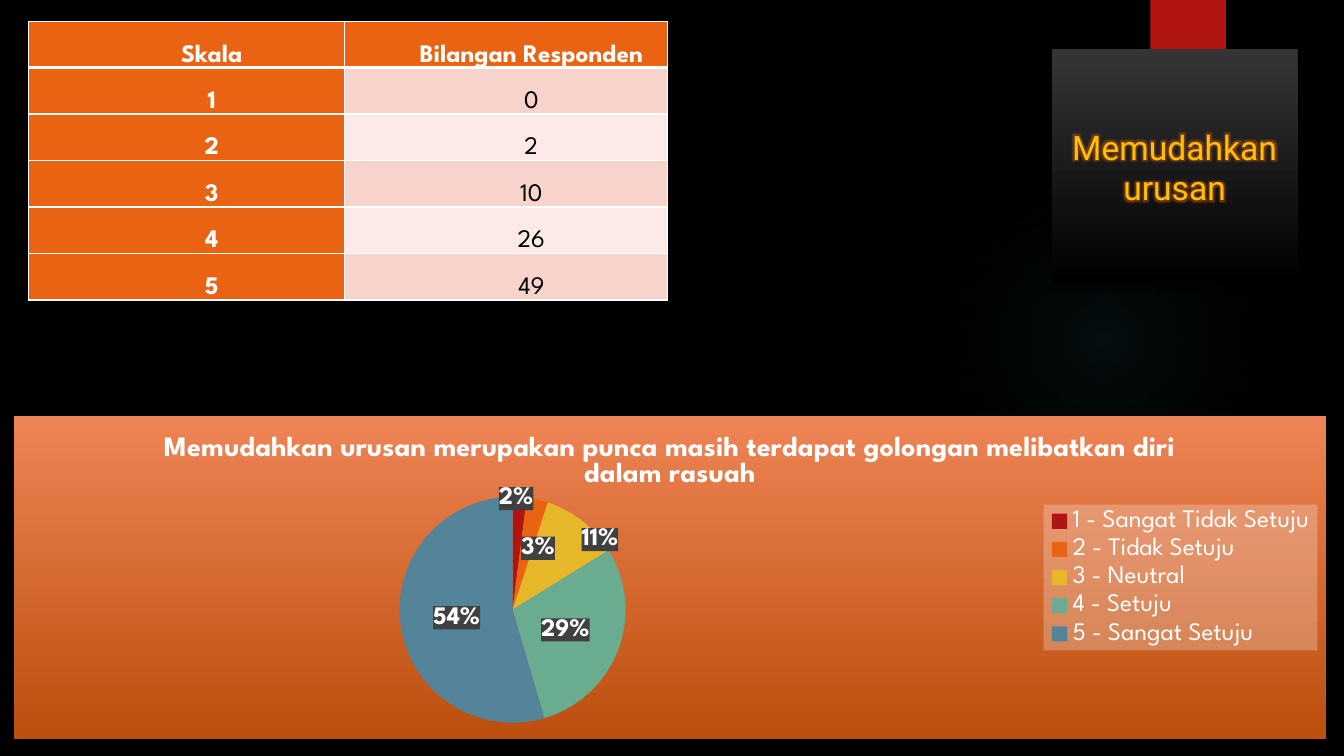
from copy import deepcopy
from dataclasses import dataclass

from pptx import Presentation
from pptx.chart.data import CategoryChartData
from pptx.dml.color import RGBColor as Rgb
from pptx.dml.fill import FillFormat
from pptx.enum.chart import (
    XL_CHART_TYPE as ChartType, XL_LABEL_POSITION as LabelPosition, XL_LEGEND_POSITION as LegendPosition)
from pptx.enum.shapes import MSO_SHAPE as Preset
from pptx.enum.text import MSO_ANCHOR as Anchor, MSO_AUTO_SIZE as AutoSize, PP_ALIGN as Align
from pptx.oxml.ns import qn
from pptx.oxml.xmlchemy import OxmlElement
from pptx.util import Inches, Pt


@dataclass(frozen=True)
class Theme:
    black: str = "000000"
    white: str = "FFFFFF"
    red: str = "B01513"
    orange: str = "EA6312"
    amber: str = "FFC000"
    teal: str = "50B9C1"
    label: str = "404040"
    bands: tuple = ("F7D3CC", "FBEAE7")
    slices: tuple = ("B01513", "EA6312", "E6B729", "6AAC90", "54849A")
    panel: tuple = ("EE8455", "BC4F0E")
    card: tuple = ("353535", "000000")
    body_font: str = "League Spartan"
    title_font: str = "Roboto"
    body: int = 18
    chart_title: int = 20
    title: int = 24


theme = Theme()


def child(parent, tag, index=None, **attributes):
    element = OxmlElement(tag)
    for name, value in attributes.items():
        element.set(name, str(value))
    parent.insert(len(parent) if index is None else index, element)
    return element


def paint(fill, *colors):
    if len(colors) == 1:
        fill.solid()
        fill.fore_color.rgb = Rgb.from_string(colors[0])
        return
    fill.gradient()
    fill.gradient_angle = 270
    for stop, color in zip(fill.gradient_stops, colors):
        stop.color.rgb = Rgb.from_string(color)


deck = Presentation()
deck.slide_width, deck.slide_height = Inches(13.33), Inches(7.5)
page = deck.slides.add_slide(deck.slide_layouts[5])
paint(page.background.fill, theme.black)

halo = page.shapes.add_shape(Preset.OVAL, Inches(9.41), Inches(1.83), Inches(3.08), Inches(3.08))
paint(halo.fill, theme.teal, theme.teal)
halo.fill.gradient_stops[1].position = 0.69
halo_gradient = halo._element.spPr.find(qn("a:gradFill"))
for color, alpha in zip(halo_gradient.iter(qn("a:srgbClr")), (7000, 0)):
    child(color, "a:alpha", val=alpha)
halo_gradient.remove(halo_gradient.find(qn("a:lin")))
circle = child(halo_gradient, "a:path", 1, path="circle")
child(circle, "a:fillToRect", l=50000, t=50000, r=50000, b=50000)

ribbon = page.shapes.add_shape(Preset.RECTANGLE, Inches(11.41), 0, Inches(0.75), Inches(1.25))
paint(ribbon.fill, theme.red)

responses = [("Skala", "Bilangan Responden"), ("1", "0"), ("2", "2"), ("3", "10"), ("4", "26"), ("5", "49")]
table = page.shapes.add_table(
    len(responses), 2, Inches(0.28), Inches(0.21), Inches(6.35), Inches(2.52)).table
table.columns[0].width, table.columns[1].width = Inches(3.14), Inches(3.2)
for row, texts in enumerate(responses):
    table.rows[row].height = Inches(0.42)
    for column, text in enumerate(texts):
        heading = row == 0 or column == 0
        cell = table.cell(row, column)
        cell.text = text
        cell.margin_left = cell.margin_right = Inches(0.07)
        cell.margin_top = cell.margin_bottom = 0
        paint(cell.fill, theme.orange if heading else theme.bands[(row - 1) % 2])
        para = cell.text_frame.paragraphs[0]
        para.alignment = Align.CENTER
        para.line_spacing = 2.0
        para._p.get_or_add_pPr().set("marL", str(Inches(0.5)))
        para.font.name = theme.body_font
        para.font.size = Pt(theme.body)
        para.font.bold = heading
        para.font.color.rgb = Rgb.from_string(theme.white if heading else theme.black)
        for order, side in enumerate("LRTB"):
            thick = (row, side) in ((0, "B"), (1, "T"))
            border = child(cell._tc.get_or_add_tcPr(), f"a:ln{side}", order, w=Pt(3 if thick else 1))
            child(child(border, "a:solidFill"), "a:srgbClr", val=theme.white)

shares = CategoryChartData()
shares.categories = ["1 - Sangat Tidak Setuju", "2 - Tidak Setuju", "3 - Neutral", "4 - Setuju", "5 - Sangat Setuju"]
shares.add_series("Series 1", (2, 3, 11, 29, 54))
chart = page.shapes.add_chart(
    ChartType.PIE, Inches(0.14), Inches(4.13), Inches(13.01), Inches(3.2), shares).chart
chart.has_title = True
chart.chart_title.include_in_layout = False
chart.chart_title.text_frame.text = "Memudahkan urusan merupakan punca masih terdapat golongan melibatkan diri dalam rasuah"
chart.has_legend = True
chart.legend.position = LegendPosition.RIGHT
chart.legend.include_in_layout = False

pie = chart.plots[0]
pie.vary_by_categories = True
series = pie.series[0]
for number, color in enumerate(theme.slices):
    point = series.points[number]
    paint(point.format.fill, color)
    point.format.line.fill.background()

labels = series.data_labels
labels.show_value = True
labels.show_percentage = False
labels.number_format = '0"%"'
labels.number_format_is_linked = False
labels.position = LabelPosition.CENTER
label_shifts = [(0, -0.17), (0.01, -0.02), (0.04, -0.08)]
moved_labels = [series.points[number].data_label for number in range(len(label_shifts))]
for label in moved_labels:
    label.position = LabelPosition.CENTER

title_font = chart.chart_title.text_frame.paragraphs[0].font
chart_fonts = [(chart.font, 10, False), (title_font, theme.chart_title, True), (chart.legend.font, theme.body, False)]
chart_fonts += [(label.font, theme.body, True) for label in [labels, *moved_labels]]
for font, size, bold in chart_fonts:
    font.name = theme.body_font
    font.size = Pt(size)
    font.bold = bold
    font.color.rgb = Rgb.from_string(theme.white)

label_group = labels._element
for leader in label_group.findall(qn("c:showLeaderLines")):
    leader.set("val", "0")
moved_elements = label_group.findall(qn("c:dLbl"))
for element, (across, down) in zip(moved_elements, label_shifts):
    place = child(child(element, "c:layout", 1), "c:manualLayout")
    child(place, "c:x", val=across)
    child(place, "c:y", val=down)
    element.insert(2, deepcopy(label_group.find(qn("c:numFmt"))))

backdrops = [(chart._chartSpace, theme.panel), (chart.legend._element, (theme.white,))]
backdrops += [(element, (theme.label,)) for element in [label_group, *moved_elements]]
for owner, colors in backdrops:
    text_style = owner.find(qn("c:txPr"))
    backdrop = child(owner, "c:spPr", owner.index(text_style))
    paint(FillFormat.from_fill_parent(backdrop), *colors)
legend_color = next(chart.legend._element.find(qn("c:spPr")).iter(qn("a:srgbClr")))
child(legend_color, "a:alpha", val=25000)
child(child(chart._chartSpace.find(qn("c:spPr")), "a:ln"), "a:noFill")

plot_area = chart._chartSpace.chart.plotArea
for layout in plot_area.findall(qn("c:layout")):
    plot_area.remove(layout)
place = child(child(plot_area, "c:layout", 0), "c:manualLayout")
plot_frame = [("layoutTarget", "inner"), ("xMode", "edge"), ("yMode", "edge"),
              ("x", 0.03), ("y", 0.25), ("w", 0.7), ("h", 0.7)]
for tag, value in plot_frame:
    child(place, f"c:{tag}", val=value)

title = page.shapes.title
page.shapes._spTree.append(title._element)
title.left, title.top, title.width, title.height = Inches(10.43), Inches(0.49), Inches(2.44), Inches(2.33)
paint(title.fill, *theme.card)
frame = title.text_frame
frame.text = "Memudahkan urusan"
frame.word_wrap = True
frame.auto_size = AutoSize.NONE
frame.vertical_anchor = Anchor.MIDDLE
para = frame.paragraphs[0]
para.alignment = Align.CENTER
para.font.name = theme.title_font
para.font.size = Pt(theme.title)
para.font.color.rgb = Rgb.from_string(theme.amber)
glow = child(child(para.runs[0]._r.get_or_add_rPr(), "a:effectLst"), "a:glow", rad=Pt(5))
child(child(glow, "a:srgbClr", val=theme.orange), "a:alpha", val=40000)

for shape, shadow in ((halo, None), (ribbon, (45, 3, 2)), (title, (60, 5, 3))):
    shape.line.fill.background()
    shape.shadow.inherit = False
    if shadow:
        alpha, blur, distance = shadow
        effect = child(shape._element.spPr.find(qn("a:effectLst")), "a:outerShdw",
                       blurRad=Pt(blur), dist=Pt(distance), dir=5400000, rotWithShape=0)
        child(child(effect, "a:srgbClr", val=theme.black), "a:alpha", val=alpha * 1000)

deck.save("out.pptx")
